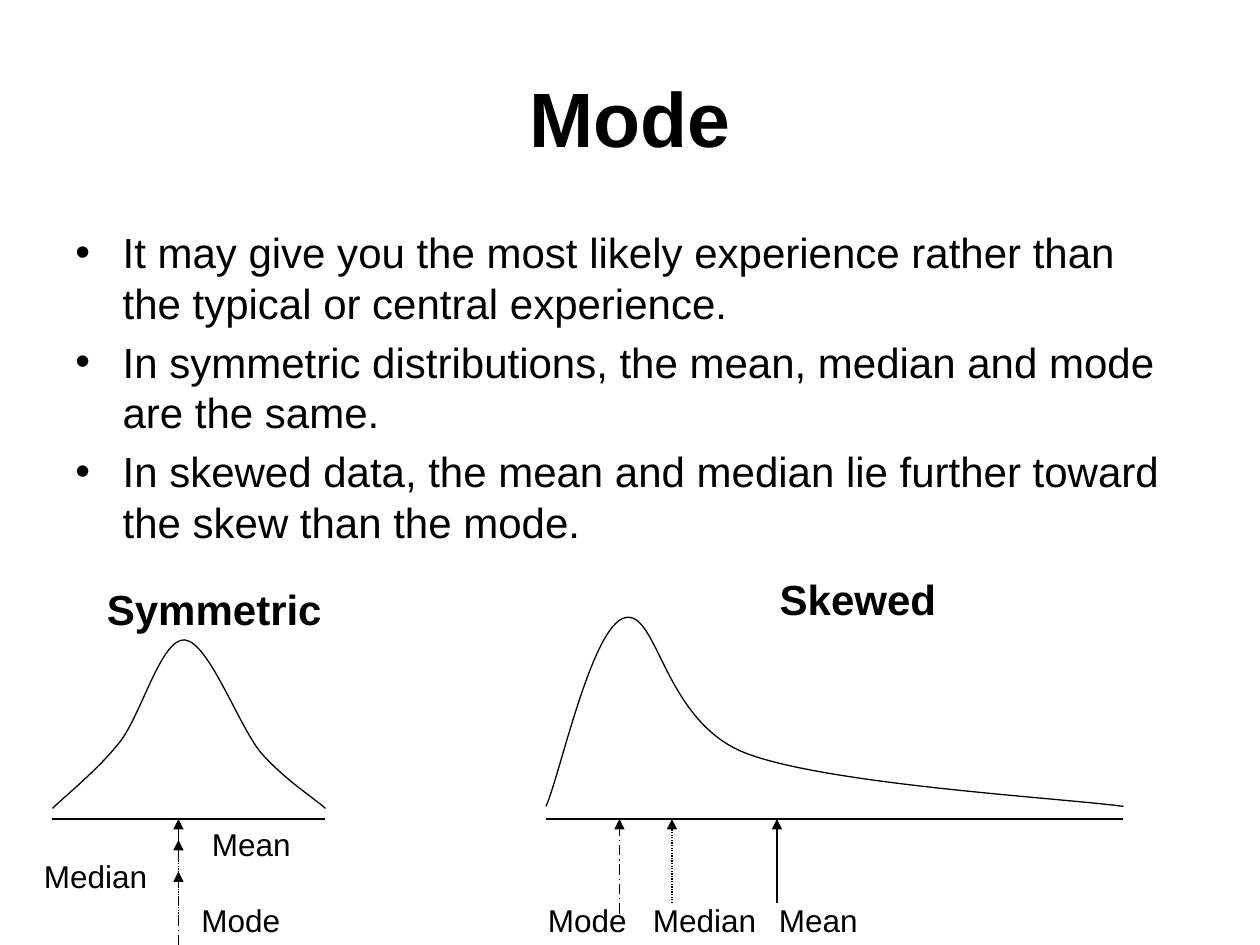
from lxml.etree import SubElement
from pptx import Presentation
from pptx.dml.color import RGBColor
from pptx.enum.dml import MSO_LINE_DASH_STYLE as Dash
from pptx.enum.shapes import MSO_CONNECTOR_TYPE as Connector
from pptx.enum.text import MSO_ANCHOR as Anchor, PP_ALIGN as Align
from pptx.oxml.ns import qn
from pptx.util import Pt

BLACK = "000000"
DASHES = {"Mean": None, "Median": Dash.ROUND_DOT, "Mode": Dash.LONG_DASH_DOT}
LABEL_WIDTHS = {"Mean": 96, "Median": 102, "Mode": 78}

SYMMETRIC = {
    "title": ("Symmetric", 24, -138),
    "curve": [(0, -6), (6.5, -12.5), (26, -28), (38.5, -44), (51, -60), (62, -103),
              (75.5, -102.3), (89.3, -101), (106, -54), (119, -38),
              (132.5, -22.5), (150, -11.5), (156, -6)],
    "arrows": {"Mean": (72, 24, 0), "Median": (72, 54, 12), "Mode": (72, 72, 30)},
    "labels": {"Mean": (84, 0), "Median": (-12, 18), "Mode": (78, 43.2)},
}
SKEWED = {
    "title": ("Skewed", 126.5, -144),
    "curve": [(0, -7.2), (8, -25), (26, -110), (45, -115), (64, -120), (67, -55.5),
              (114.5, -37.5), (162, -19.5), (294.5, -12), (330, -7.2)],
    "arrows": {"Mean": (132, 48, 0), "Median": (72, 48, 0), "Mode": (42, 54, 0)},
    "labels": {"Mean": (126, 43.2), "Median": (54, 43.2), "Mode": (-6, 43.2)},
}


def color(value):
    """Turn a hex string into a colour."""
    return RGBColor.from_string(value)


def add_text(slide, text, left, top, width, height, size=18, bold=False,
             align=Align.LEFT, anchor=Anchor.TOP, bullet=False, space=0):
    """Add a text box with one paragraph per line of text."""
    box = slide.shapes.add_textbox(Pt(left), Pt(top), Pt(width), Pt(height))
    frame = box.text_frame
    frame.word_wrap = True
    frame.vertical_anchor = anchor
    frame.text = text
    for index, paragraph in enumerate(frame.paragraphs):
        paragraph.alignment = align
        paragraph.space_before = Pt(space if index else 0)
        font = paragraph.runs[0].font
        font.name, font.size, font.bold = "Arial", Pt(size), bold
        font.color.rgb = color(BLACK)
        if bullet:
            properties = paragraph._p.get_or_add_pPr()
            properties.set("marL", str(Pt(27)))
            properties.set("indent", str(-Pt(27)))
            SubElement(properties, qn("a:buFont"), typeface="Arial")
            SubElement(properties, qn("a:buChar"), char="•")


def style_line(shape, dash=None):
    """Give a shape the thin black line."""
    shape.line.color.rgb = color(BLACK)
    shape.line.width = Pt(0.75)
    if dash is not None:
        shape.line.dash_style = dash


def add_line(slide, x1, y1, x2, y2, dash=None, arrow=False):
    """Add a straight line, with an arrowhead at its end if asked."""
    line = slide.shapes.add_connector(Connector.STRAIGHT, Pt(x1), Pt(y1), Pt(x2), Pt(y2))
    style_line(line, dash)
    if arrow:
        SubElement(line.line._get_or_add_ln(), qn("a:tailEnd"), type="triangle")
    SubElement(line._element.spPr, qn("a:effectLst"))


def add_curve(slide, left, top, controls):
    """Add an open outline whose segments are cubic curves."""
    places = [(Pt(left + x), Pt(top + y)) for x, y in controls]
    builder = slide.shapes.build_freeform(*places[0])
    builder.add_line_segments(places[1:], close=False)
    curve = builder.convert_to_shape()
    outline = next(curve._element.iter(qn("a:path")))
    segments = outline.findall(qn("a:lnTo"))
    for start in range(0, len(segments), 3):
        cubic = SubElement(outline, qn("a:cubicBezTo"))
        for segment in segments[start:start + 3]:
            cubic.append(segment[0])
            outline.remove(segment)
    curve.shadow.inherit = False
    curve.fill.background()
    style_line(curve)


def add_distribution(slide, left, top, width, distribution):
    """Draw a distribution whose axis starts at left, top."""
    add_line(slide, left, top, left + width, top)
    add_curve(slide, left, top, distribution["curve"])
    for name, (x, start, end) in distribution["arrows"].items():
        add_line(slide, left + x, top + start, left + x, top + end, DASHES[name], arrow=True)
    for name, (x, y) in distribution["labels"].items():
        add_text(slide, name, left + x, top + y, LABEL_WIDTHS[name], 28.8)
    title, x, y = distribution["title"]
    add_text(slide, title, left + x, top + y, 150, 36, size=24, bold=True)


def add_heading(slide, left, top, width, height):
    """Place the slide title."""
    add_text(slide, "Mode", left, top, width, height, size=44, bold=True,
             align=Align.CENTER, anchor=Anchor.MIDDLE)


def add_points(slide, left, top, width, height):
    """Place the bulleted statements."""
    statements = (
        "It may give you the most likely experience rather than the typical or central experience.",
        "In symmetric distributions, the mean, median and mode are the same.",
        "In skewed data, the mean and median lie further toward the skew than the mode.",
    )
    add_text(slide, "\n".join(statements), left, top, width, height,
             size=24, bullet=True, space=5)


def main():
    """Build and save the slide."""
    presentation = Presentation()
    presentation.slide_width, presentation.slide_height = Pt(720), Pt(540)
    slide = presentation.slides.add_slide(presentation.slide_layouts[6])
    add_heading(slide, 36, 21.6, 648, 90)
    add_points(slide, 36, 126, 648, 356.4)
    add_distribution(slide, 30, 468, 156, SYMMETRIC)
    add_distribution(slide, 312, 468, 330, SKEWED)
    presentation.save("out.pptx")


if __name__ == "__main__":
    main()
